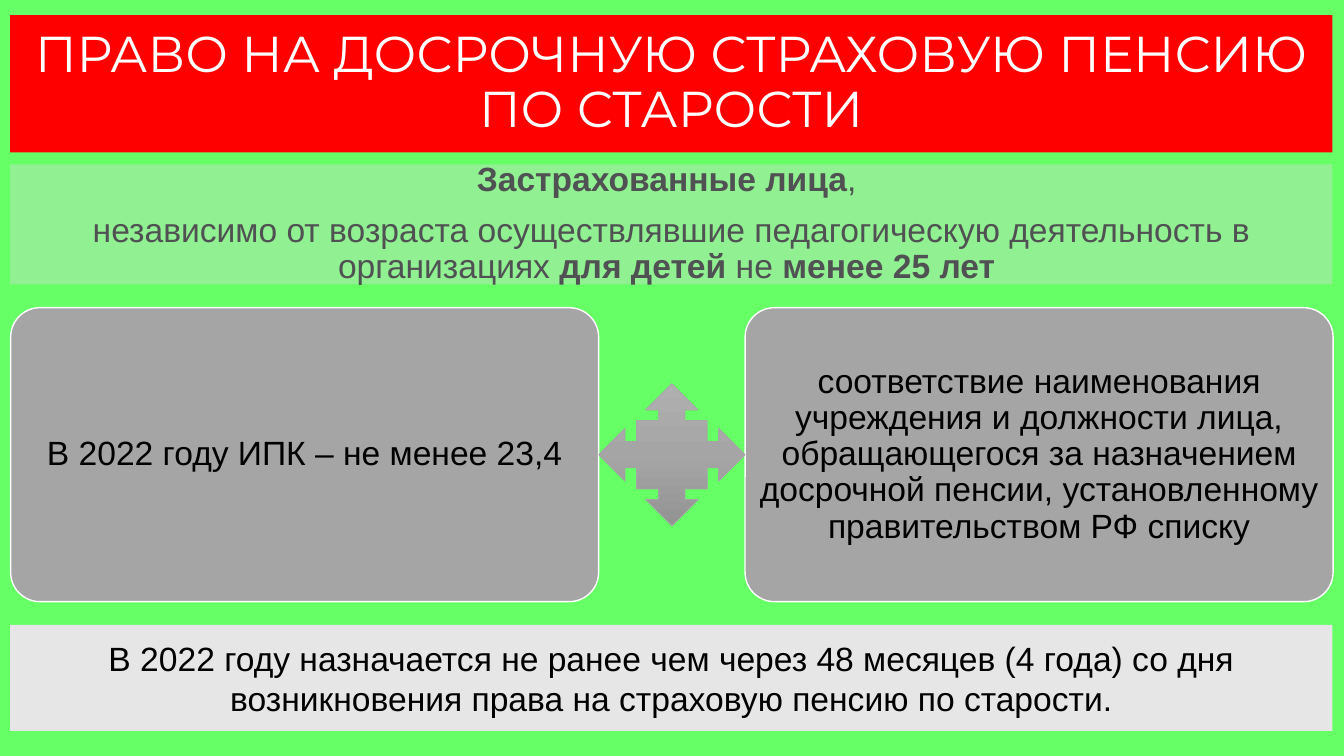
from copy import deepcopy

from pptx import Presentation
from pptx.dml.color import RGBColor
from pptx.enum.shapes import MSO_SHAPE
from pptx.enum.text import MSO_ANCHOR, MSO_AUTO_SIZE, PP_ALIGN
from pptx.oxml.ns import qn
from pptx.util import Pt
from lxml import etree

RECTANGLE = MSO_SHAPE.RECTANGLE
ROUNDED = MSO_SHAPE.ROUNDED_RECTANGLE
FOUR_ARROWS = MSO_SHAPE.QUAD_ARROW_CALLOUT
MIDDLE = MSO_ANCHOR.MIDDLE
NO_AUTOFIT = MSO_AUTO_SIZE.NONE
CENTER = PP_ALIGN.CENTER

LEFT, WIDTH = 7.2, 944.6
CARD_WIDTH = 420


def color(hex_value):
    return RGBColor.from_string(hex_value)


def paint(shape, fill, line=None, line_width=1):
    shape.fill.solid()
    shape.fill.fore_color.rgb = color(fill)
    if line:
        shape.line.color.rgb = color(line)
        shape.line.width = Pt(line_width)
    else:
        shape.line.fill.background()


def add_block(slide, kind, box):
    block = slide.shapes.add_shape(kind, *map(Pt, box))
    block.shadow.inherit = False
    return block


def write(shape, paragraphs, size=24, font="Arial", ink="000000",
          spacing=0.9, before=0):
    """Each paragraph is a list of (text, bold) pieces."""
    frame = shape.text_frame
    frame.word_wrap = True
    frame.auto_size = NO_AUTOFIT
    frame.vertical_anchor = MIDDLE
    for index, pieces in enumerate(paragraphs):
        paragraph = frame.add_paragraph() if index else frame.paragraphs[0]
        paragraph.alignment = CENTER
        paragraph.line_spacing = spacing
        paragraph.space_before = Pt(before)
        for text, bold in pieces:
            run = paragraph.add_run()
            run.text = text
            run.font.size = Pt(size)
            run.font.name = font
            run.font.bold = bold
            run.font.color.rgb = color(ink)


def title_band(slide, box):
    title = slide.shapes.title
    title.left, title.top, title.width, title.height = map(Pt, box)
    paint(title, "FF0000")
    write(title, [[("ПРАВО НА ДОСРОЧНУЮ СТРАХОВУЮ ПЕНСИЮ ПО СТАРОСТИ", False)]],
          size=36, font="Montserrat", ink="FFFFFF", before=10)


def insured_band(slide, box):
    band = add_block(slide, RECTANGLE, box)
    paint(band, "D9D9D9")
    # Translucent fill
    tint = band.fill._xPr.find(qn("a:solidFill"))[0]
    etree.SubElement(tint, qn("a:alpha")).set("val", "38000")
    write(band, [
        [("Застрахованные лица", True), (", ", False)],
        [("независимо от возраста осуществлявшие педагогическую деятельность "
          "в организациях ", False),
         ("для детей ", True), ("не ", False), ("менее 25 лет ", True)],
    ], ink="505153", before=10)


def condition_card(slide, box, text):
    card = add_block(slide, ROUNDED, box)
    card.adjustments[0] = 0.1
    paint(card, "A5A5A5", line="FFFFFF")
    frame = card.text_frame
    frame.margin_left = frame.margin_right = Pt(3.6)
    frame.margin_top = frame.margin_bottom = Pt(2.4)
    write(card, [[(text, False)]])


def link_arrows(slide, box):
    arrows = add_block(slide, FOUR_ARROWS, box)
    paint(arrows, "A5A5A5", line="A5A5A5", line_width=0.5)
    # Three-stop gradient, top to bottom
    arrows.fill.gradient()
    arrows.fill.gradient_angle = 270
    stop_list = arrows.fill._fill._gradFill.find(qn("a:gsLst"))
    stop_list.insert(1, deepcopy(stop_list[0]))
    shades = [(0, "AFAFAF"), (0.5, "A5A5A5"), (1, "939393")]
    for stop, (position, shade) in zip(arrows.fill.gradient_stops, shades):
        stop.position = position
        stop.color.rgb = color(shade)


def conditions(slide, box):
    left, top, width, height = box
    right_card = left + width - CARD_WIDTH
    gap = width - 2 * CARD_WIDTH
    condition_card(slide, (left, top, CARD_WIDTH, height),
                   "В 2022 году ИПК – не менее 23,4")
    condition_card(slide, (right_card, top, CARD_WIDTH, height),
                   "соответствие наименования учреждения и должности лица, "
                   "обращающегося за назначением досрочной пенсии, "
                   "установленному правительством РФ списку")
    arrows_height = 101.5
    link_arrows(slide, (left + CARD_WIDTH, top + (height - arrows_height) / 2,
                        gap, arrows_height))


def start_date_band(slide, box):
    band = add_block(slide, RECTANGLE, box)
    paint(band, "E7E6E6")
    write(band, [[("В 2022 году назначается не ранее чем через 48 месяцев "
                   "(4 года) со дня возникновения права на страховую пенсию "
                   "по старости.", False)]], spacing=1.0)


def main():
    deck = Presentation()
    deck.slide_width, deck.slide_height = Pt(960), Pt(540)
    slide = deck.slides.add_slide(deck.slide_layouts[5])
    slide.background.fill.solid()
    slide.background.fill.fore_color.rgb = color("66FF66")

    title_band(slide, (LEFT, 10.8, WIDTH, 98))
    insured_band(slide, (LEFT, 117.4, WIDTH, 85.7))
    start_date_band(slide, (LEFT, 446.4, WIDTH, 75.6))
    conditions(slide, (LEFT + 0.4, 219.8, WIDTH, 210))

    deck.save("out.pptx")


if __name__ == "__main__":
    main()
